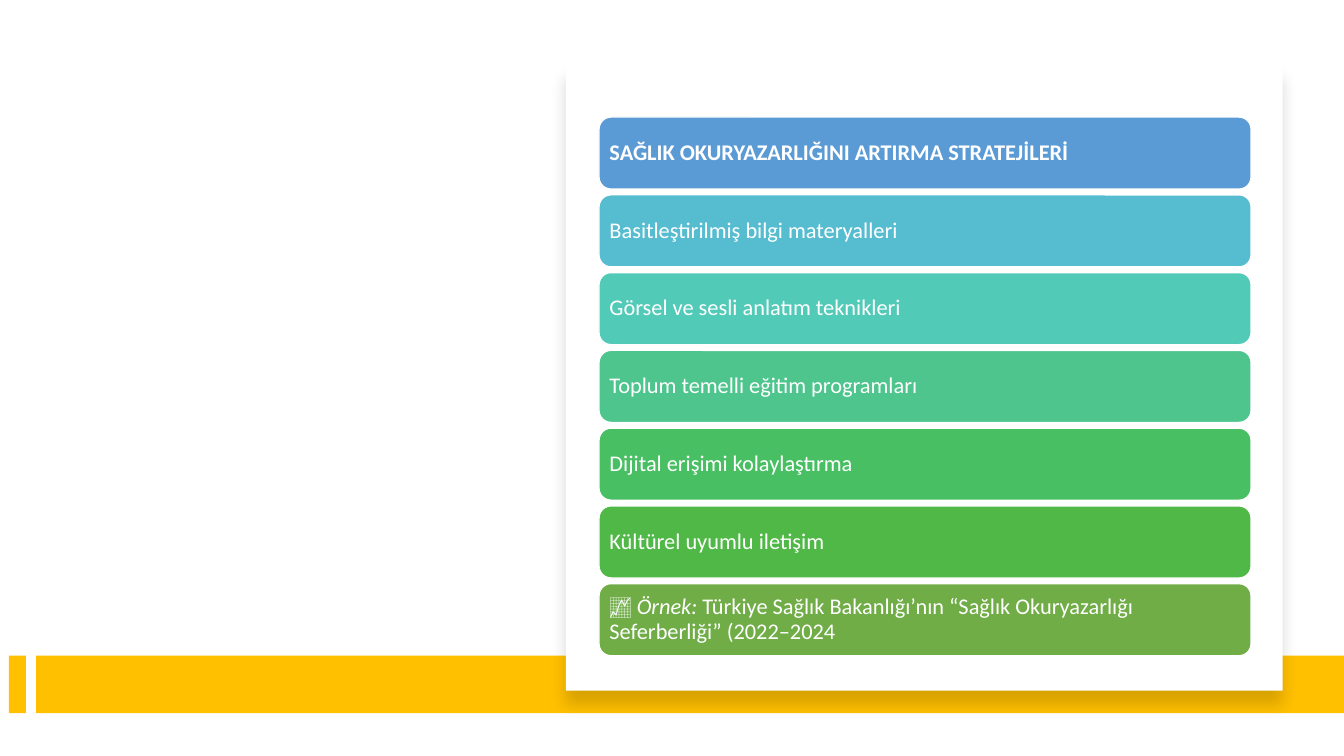
from lxml import etree
from pptx import Presentation, util as u
from pptx.dml.color import RGBColor
from pptx.enum import shapes, text
from pptx.oxml import ns

Pt = u.Pt
COLORS = {"white": "FFFFFF", "amber": "FFC000", "shadow": "000000"}
FONT = "Calibri"

# Fill colour and styled runs (text, style) of each strategy, top to bottom
STRATEGIES = [
    ("5B9BD5", [("SAĞLIK OKURYAZARLIĞINI ARTIRMA STRATEJİLERİ", "bold")]),
    ("56BCD0", [("Basitleştirilmiş bilgi materyalleri", "")]),
    ("52CAB8", [("Görsel ve sesli anlatım teknikleri", "")]),
    ("4DC58D", [("Toplum temelli eğitim programları", "")]),
    ("49BF64", [("Dijital erişimi kolaylaştırma", "")]),
    ("50B846", [("Kültürel uyumlu iletişim", "")]),
    ("70AD47", [
        ("📈 ", ""),
        ("Örnek:", "italic"),
        (" Türkiye Sağlık Bakanlığı’nın “Sağlık Okuryazarlığı "
         "Seferberliği” (2022–2024", ""),
    ]),
]
ROW_LEFT, ROW_TOP, ROW_WIDTH, ROW_HEIGHT = 427.9, 83.6, 465.8, 51.5
ROW_PITCH = 55.55


def add_block(slide, kind, left, top, width, height, fill):
    block = slide.shapes.add_shape(kind, Pt(left), Pt(top), Pt(width), Pt(height))
    block.shadow.inherit = False
    block.fill.solid()
    block.fill.fore_color.rgb = RGBColor.from_string(fill)
    block.line.fill.background()
    return block


def add_soft_shadow(block):
    """Cast a blurred shadow straight down."""
    effects = block._element.spPr.find(ns.qn("a:effectLst"))
    shadow = etree.SubElement(
        effects, ns.qn("a:outerShdw"), blurRad=str(Pt(11)), dist=str(Pt(10)),
        dir="5400000", algn="t", rotWithShape="0")
    color = etree.SubElement(shadow, ns.qn("a:srgbClr"), val=COLORS["shadow"])
    etree.SubElement(color, ns.qn("a:alpha"), val="15000")


def add_strategy(slide, top, fill, runs):
    row = add_block(slide, shapes.MSO_SHAPE.ROUNDED_RECTANGLE,
                    ROW_LEFT, top, ROW_WIDTH, ROW_HEIGHT, fill)
    row.line.color.rgb = RGBColor.from_string(COLORS["white"])
    row.line.width = Pt(1)
    frame = row.text_frame
    frame.word_wrap = True
    frame.vertical_anchor = text.MSO_ANCHOR.MIDDLE
    frame.margin_left = frame.margin_right = Pt(5)
    frame.margin_top = frame.margin_bottom = Pt(5)
    para = frame.paragraphs[0]
    para.alignment = text.PP_ALIGN.LEFT
    para.line_spacing = 0.9
    for words, style in runs:
        span = para.add_run()
        span.text = words
        span.font.name = FONT
        span.font.size = Pt(16)
        span.font.bold = style == "bold"
        span.font.italic = style == "italic"
        span.font.color.rgb = RGBColor.from_string(COLORS["white"])


def main():
    deck = Presentation()
    deck.slide_width, deck.slide_height = Pt(960), Pt(540)
    slide = deck.slides.add_slide(deck.slide_layouts[6])
    rectangle = shapes.MSO_SHAPE.RECTANGLE

    for left, width in ((6.4, 12.2), (25.8, 934.2)):
        add_block(slide, rectangle, left, 468.4, width, 41, COLORS["amber"])
    card = add_block(slide, rectangle, 404.2, 46.2, 512, 447.2, COLORS["white"])
    add_soft_shadow(card)
    for index, (fill, runs) in enumerate(STRATEGIES):
        add_strategy(slide, ROW_TOP + index * ROW_PITCH, fill, runs)

    deck.save("out.pptx")


if __name__ == "__main__":
    main()
